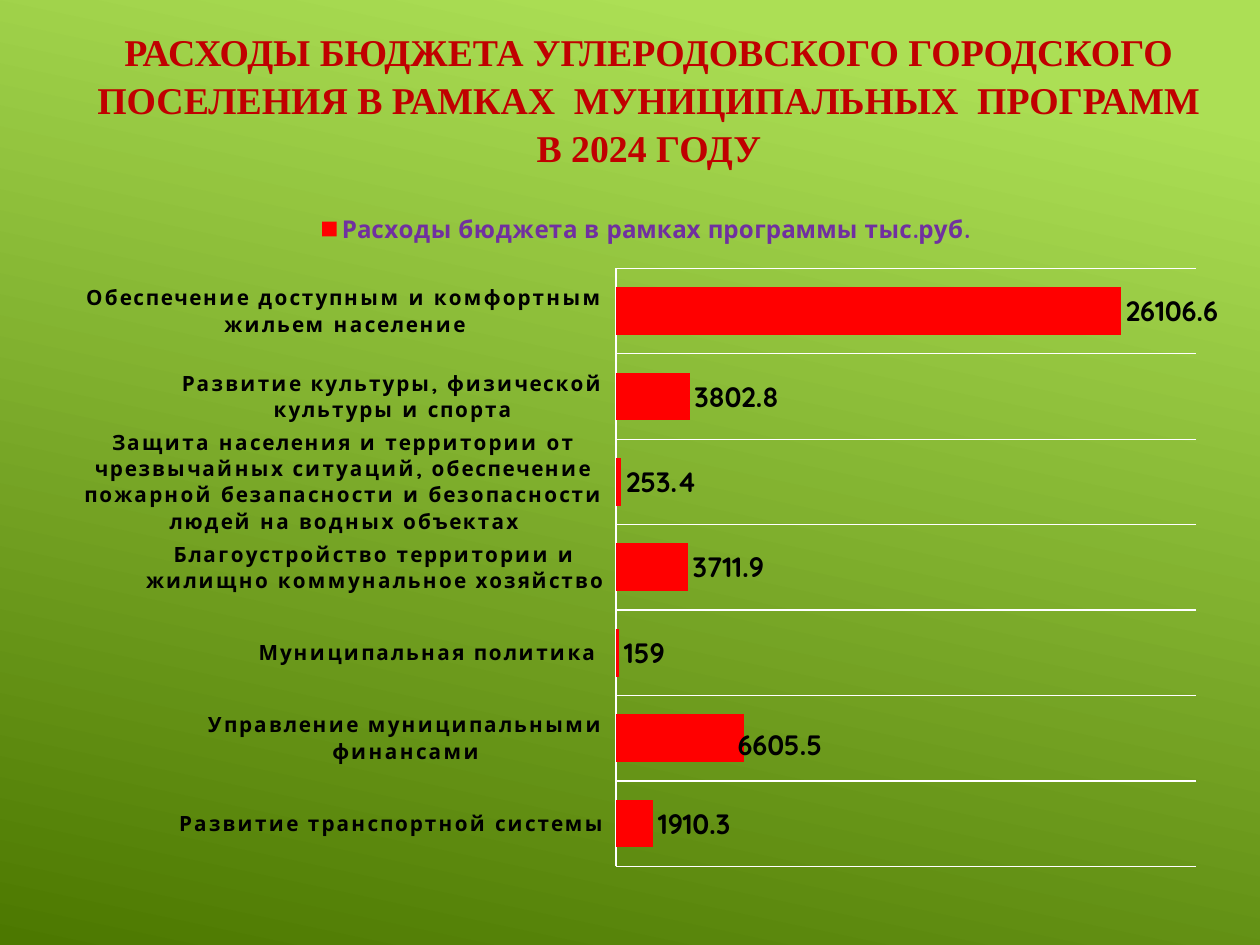
from lxml import etree
from pptx import Presentation
from pptx.chart.data import CategoryChartData
from pptx.dml.color import RGBColor
from pptx.enum.chart import XL_CHART_TYPE as ChartType
from pptx.enum.chart import XL_LABEL_POSITION as LabelPosition
from pptx.enum.chart import XL_LEGEND_POSITION as LegendPosition
from pptx.enum.chart import XL_TICK_LABEL_POSITION as TickLabels
from pptx.enum.chart import XL_TICK_MARK as TickMark
from pptx.enum.text import MSO_ANCHOR, PP_ALIGN
from pptx.oxml.ns import qn
from pptx.util import Inches, Pt

TITLE = ("РАСХОДЫ БЮДЖЕТА УГЛЕРОДОВСКОГО ГОРОДСКОГО ПОСЕЛЕНИЯ "
         "В РАМКАХ  МУНИЦИПАЛЬНЫХ  ПРОГРАММ В 2024 ГОДУ")
SERIES_NAME = "Расходы бюджета в рамках программы тыс.руб."
EXPENSES = [
    ("Развитие транспортной системы", 1910.3),
    ("Управление муниципальными финансами", 6605.5),
    ("Муниципальная политика ", 159),
    ("Благоустройство территории и жилищно коммунальное хозяйство", 3711.9),
    ("Защита населения и территории от чрезвычайных ситуаций, обеспечение "
     "пожарной безапасности и безопасности людей на водных объектах", 253.4),
    ("Развитие культуры, физической культуры и спорта", 3802.8),
    ("Обеспечение доступным и комфортным жильем население", 26106.6),
]
FINANCE_POINT = 1


def rgb(color):
    return RGBColor.from_string(color)


def style_font(font, size, color, name="Quicksand", bold=True):
    font.size = Pt(size)
    font.bold = bold
    font.name = name
    font.color.rgb = rgb(color)


def style_line(line, color, width):
    line.color.rgb = rgb(color)
    line.width = Pt(width)


def set_background(page):
    fill = page.background.fill
    fill.gradient()
    fill.gradient_angle = 360 - 102
    for stop, (position, color) in zip(fill.gradient_stops,
                                       [(0.1, "ACDF55"), (1, "4C7800")]):
        stop.position = position
        stop.color.rgb = rgb(color)


def add_title(page):
    box = page.shapes.add_textbox(Inches(0.58), Inches(0.33), Inches(9.14), Inches(0.89))
    frame = box.text_frame
    frame.word_wrap = True
    frame.vertical_anchor = MSO_ANCHOR.MIDDLE
    frame.text = TITLE
    para = frame.paragraphs[0]
    para.alignment = PP_ALIGN.CENTER
    para.line_spacing = 1.06
    style_font(para.runs[0].font, 21.6, "C00000", "Times New Roman")


def make_layout(**settings):
    """Return a manual chart layout with the given settings in schema order."""
    layout = etree.Element(qn("c:layout"))
    manual = etree.SubElement(layout, qn("c:manualLayout"))
    for name, value in settings.items():
        etree.SubElement(manual, qn(f"c:{name}")).set("val", str(value))
    return layout


def place_plot(chart):
    area = chart.plots[0]._element.getparent()
    for old in area.findall(qn("c:layout")):
        area.remove(old)
    area.insert(0, make_layout(layoutTarget="inner", xMode="edge", yMode="edge",
                               x=0.473, y=0.101, w=0.519, h=0.871))


def style_axes(chart):
    axis = chart.category_axis
    axis.major_tick_mark = axis.minor_tick_mark = TickMark.NONE
    axis.tick_label_position = TickLabels.LOW
    axis.has_major_gridlines = True
    style_line(axis.major_gridlines.format.line, "FFFFFF", 0.75)
    style_line(axis.format.line, "FFFFFF", 0.75)
    style_font(axis.tick_labels.font, 12, "000000")
    # Wider letter spacing in the programme names
    for properties in axis._element.iter(qn("a:defRPr")):
        properties.set("spc", "120")

    values = chart.value_axis
    values.minimum_scale, values.maximum_scale = 0, 30000
    values.has_major_gridlines = False
    values.visible = False


def style_series(chart):
    plot = chart.plots[0]
    plot.gap_width = 79
    plot.vary_by_categories = False
    series = plot.series[0]
    series.format.fill.solid()
    series.format.fill.fore_color.rgb = rgb("FF0000")

    # Value labels, with the finance label nudged off its default place
    series.data_labels.show_value = True
    finance_label = series.points[FINANCE_POINT].data_label
    for labels in (series.data_labels, finance_label):
        labels.position = LabelPosition.OUTSIDE_END
        style_font(labels.font, 16, "000000")
    label_xml = series.data_labels._element.find(qn("c:dLbl"))
    label_xml.insert(1, make_layout(x=-0.01, y=0.01))


def add_expense_chart(page):
    data = CategoryChartData()
    data.categories = [name for name, _ in EXPENSES]
    data.add_series(SERIES_NAME, [value for _, value in EXPENSES])
    chart = page.shapes.add_chart(ChartType.BAR_CLUSTERED, Inches(0.67), Inches(1.58),
                                  Inches(9), Inches(5.45), data).chart
    style_font(chart.font, 10, "FFFFFF", bold=False)
    chart.has_title = False
    chart.has_legend = True
    chart.legend.position = LegendPosition.TOP
    chart.legend.include_in_layout = False
    style_font(chart.legend.font, 14, "7030A0")
    style_axes(chart)
    style_series(chart)
    place_plot(chart)


def main():
    deck = Presentation()
    deck.slide_width, deck.slide_height = Inches(10), Inches(7.5)
    page = deck.slides.add_slide(deck.slide_layouts[6])
    set_background(page)
    add_title(page)
    add_expense_chart(page)
    deck.save("out.pptx")


if __name__ == "__main__":
    main()
